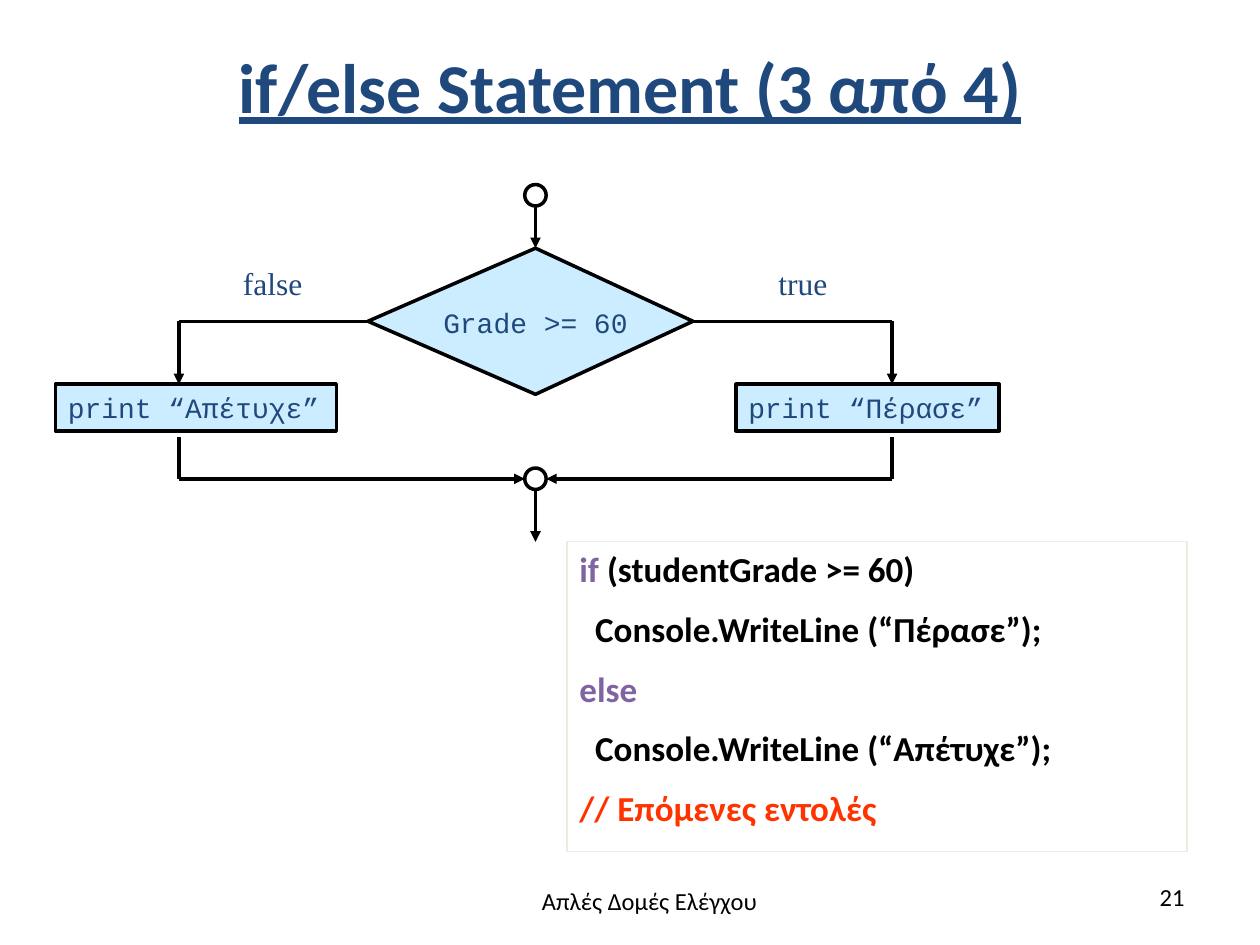
"""Build the if/else flowchart slide with its code listing."""
from dataclasses import dataclass
from typing import Optional

from lxml.etree import SubElement
from pptx import Presentation
from pptx.dml.color import RGBColor
from pptx.enum.shapes import MSO_CONNECTOR, MSO_SHAPE
from pptx.enum.text import MSO_ANCHOR, PP_ALIGN as Align
from pptx.oxml.ns import qn
from pptx.util import Inches, Pt


@dataclass(frozen=True)
class Theme:
    navy: str = "1F497D"
    black: str = "000000"
    white: str = "FFFFFF"
    sky: str = "CCECFF"
    keyword: str = "8064A2"
    comment: str = "FF3300"
    frame: str = "EEECE1"
    sans: str = "Calibri"
    mono: str = "Courier New"
    serif: str = "Times New Roman"
    title_size: int = 40
    code_size: int = 20
    branch_size: int = 18
    step_size: int = 16
    footer_size: int = 14
    flow_width: float = 2
    frame_width: float = 0.75


THEME = Theme()


@dataclass(frozen=True)
class Style:
    font: str
    size: int
    color: str
    bold: bool = False
    underline: bool = False


@dataclass(frozen=True)
class Box:
    left: float
    top: float
    width: float
    height: float

    def emu(self) -> tuple:
        return tuple(Inches(v) for v in (self.left, self.top, self.width, self.height))


@dataclass(frozen=True)
class Label:
    text: str
    box: Box
    style: Style
    align: Align = Align.LEFT
    wrap: bool = False


@dataclass(frozen=True)
class Flow:
    start: tuple
    end: tuple
    arrow: bool = True


STEP = Style(THEME.mono, THEME.step_size, THEME.navy)
BRANCH = Style(THEME.serif, THEME.branch_size, THEME.navy)
FOOTER = Style(THEME.sans, THEME.footer_size, THEME.black)
HEADING = Style(THEME.sans, THEME.title_size, THEME.navy, True, True)
CODE = Style(THEME.sans, THEME.code_size, THEME.black, True)
KEYWORD = Style(THEME.sans, THEME.code_size, THEME.keyword, True)
COMMENT = Style(THEME.sans, THEME.code_size, THEME.comment, True)

FALSE_X, CENTER_X, TRUE_X = 1.42, 4.25, 7.08
DECISION_LEFT, DECISION_RIGHT = 2.92, 5.5
DECISION_TOP, BRANCH_Y, DECISION_BOTTOM = 1.97, 2.55, 3.13
STEP_TOP, STEP_EXIT, MERGE_Y, EXIT_Y = 3.05, 3.47, 3.8, 4.3
START_Y, NODE_RADIUS = 1.55, 0.085

STEPS = [
    Label("print “Πέρασε”", Box(5.84, STEP_TOP, 2.09, 0.37), STEP),
    Label("print “Απέτυχε”", Box(0.44, STEP_TOP, 2.23, 0.37), STEP),
]
LABELS = [
    Label("Grade >= 60", Box(3.42, 2.38, 1.67, 0.37), STEP),
    Label("false", Box(1.83, 2.05, 0.67, 0.4), BRANCH),
    Label("true", Box(6.08, 2.05, 0.59, 0.4), BRANCH),
    Label("Απλές Δομές Ελέγχου", Box(3.41, 6.98, 3.49, 0.4), FOOTER, Align.CENTER, True),
    Label("21", Box(7.17, 6.95, 2.33, 0.4), FOOTER, Align.RIGHT, True),
]
CODE_LINES = [
    [("if ", KEYWORD), ("(studentGrade >= 60)", CODE)],
    [("  Console.WriteLine (“Πέρασε”);", CODE)],
    [("else", KEYWORD)],
    [("  Console.WriteLine (“Απέτυχε”);", CODE)],
    [("// Επόμενες εντολές", COMMENT)],
]


def branch_flows(branch_x: float, decision_x: float, merge_x: float) -> list[Flow]:
    """Return the lines of one branch from the decision to the merge node."""
    return [
        Flow((decision_x, BRANCH_Y), (branch_x, BRANCH_Y), False),
        Flow((branch_x, BRANCH_Y), (branch_x, STEP_TOP)),
        Flow((branch_x, STEP_EXIT), (branch_x, MERGE_Y), False),
        Flow((branch_x, MERGE_Y), (merge_x, MERGE_Y)),
    ]


def add_run(paragraph, text: str, style: Style) -> None:
    """Append one styled run."""
    run = paragraph.add_run()
    run.text = text
    font = run.font
    font.name, font.size = style.font, Pt(style.size)
    font.bold, font.underline = style.bold, style.underline
    font.color.rgb = RGBColor.from_string(style.color)


def paint(shape, fill: Optional[str], line: str, width: float) -> None:
    """Set fill and outline and drop the shadow."""
    shape.shadow.inherit = False
    if fill:
        shape.fill.solid()
        shape.fill.fore_color.rgb = RGBColor.from_string(fill)
    else:
        shape.fill.background()
    shape.line.color.rgb = RGBColor.from_string(line)
    shape.line.width = Pt(width)


def write_label(shape, label: Label) -> None:
    """Write a one-line label into a shape."""
    frame = shape.text_frame
    frame.word_wrap = label.wrap
    frame.vertical_anchor = MSO_ANCHOR.TOP
    paragraph = frame.paragraphs[0]
    paragraph.alignment = label.align
    add_run(paragraph, label.text, label.style)


def add_decision(shapes) -> None:
    """Draw the decision diamond."""
    builder = shapes.build_freeform(Inches(CENTER_X), Inches(DECISION_TOP))
    corners = [(DECISION_RIGHT, BRANCH_Y), (CENTER_X, DECISION_BOTTOM), (DECISION_LEFT, BRANCH_Y)]
    builder.add_line_segments([(Inches(x), Inches(y)) for x, y in corners], close=True)
    paint(builder.convert_to_shape(), THEME.sky, THEME.black, THEME.flow_width)


def add_flow(shapes, flow: Flow) -> None:
    """Draw one flow line, with an arrowhead where it ends."""
    points = [Inches(v) for v in (*flow.start, *flow.end)]
    connector = shapes.add_connector(MSO_CONNECTOR.STRAIGHT, *points)
    connector.line.color.rgb = RGBColor.from_string(THEME.black)
    connector.line.width = Pt(THEME.flow_width)
    if flow.arrow:
        SubElement(connector.line._get_or_add_ln(), qn("a:tailEnd"), type="triangle")
    SubElement(connector._element.spPr, qn("a:effectLst"))


def add_node(shapes, center_y: float) -> None:
    """Draw a small start or merge circle."""
    size = 2 * NODE_RADIUS
    box = Box(CENTER_X - NODE_RADIUS, center_y - NODE_RADIUS, size, size)
    paint(shapes.add_shape(MSO_SHAPE.OVAL, *box.emu()), THEME.white, THEME.black, THEME.flow_width)


def add_code(shapes) -> None:
    """Draw the framed code listing."""
    listing = shapes.add_shape(MSO_SHAPE.RECTANGLE, *Box(4.5, EXIT_Y, 4.92, 2.46).emu())
    paint(listing, None, THEME.frame, THEME.frame_width)
    frame = listing.text_frame
    frame.word_wrap, frame.vertical_anchor = True, MSO_ANCHOR.TOP
    for index, parts in enumerate(CODE_LINES):
        paragraph = frame.add_paragraph() if index else frame.paragraphs[0]
        paragraph.alignment = Align.LEFT
        paragraph.space_before = Pt(THEME.code_size / 2 if index else 0)
        for text, style in parts:
            add_run(paragraph, text, style)


def main() -> None:
    """Build and save the slide."""
    deck = Presentation()
    deck.slide_width, deck.slide_height = Inches(10), Inches(7.5)
    shapes = deck.slides.add_slide(deck.slide_layouts[5]).shapes
    heading = Label("if/else Statement (3 από 4)", Box(0.5, -0.03, 9, 1.42), HEADING, Align.CENTER, True)
    title = shapes.title
    title.left, title.top, title.width, title.height = heading.box.emu()
    write_label(title, heading)
    title.text_frame.vertical_anchor = MSO_ANCHOR.MIDDLE

    add_decision(shapes)
    for step in STEPS:
        rectangle = shapes.add_shape(MSO_SHAPE.RECTANGLE, *step.box.emu())
        paint(rectangle, THEME.sky, THEME.black, THEME.flow_width)
        write_label(rectangle, step)
    for flow in [
        Flow((CENTER_X, START_Y + NODE_RADIUS), (CENTER_X, DECISION_TOP)),
        *branch_flows(FALSE_X, DECISION_LEFT, CENTER_X - NODE_RADIUS),
        *branch_flows(TRUE_X, DECISION_RIGHT, CENTER_X + NODE_RADIUS),
        Flow((CENTER_X, MERGE_Y + NODE_RADIUS), (CENTER_X, EXIT_Y)),
    ]:
        add_flow(shapes, flow)
    for center_y in (START_Y, MERGE_Y):
        add_node(shapes, center_y)
    add_code(shapes)
    for label in LABELS:
        write_label(shapes.add_textbox(*label.box.emu()), label)
    deck.save("out.pptx")


if __name__ == "__main__":
    main()
